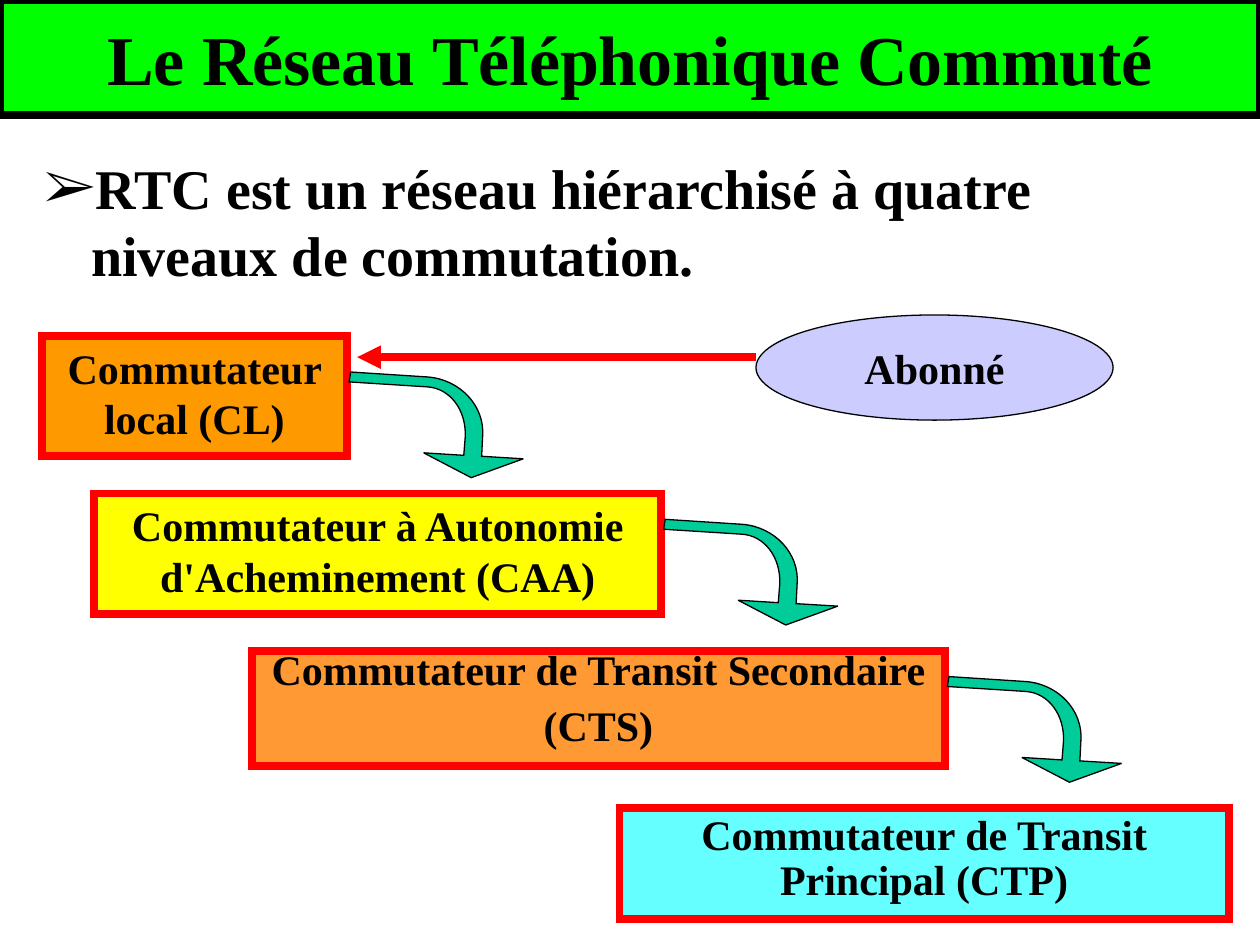
"""Build a slide on the four switching levels of the telephone network."""
from dataclasses import dataclass
from typing import Optional

import lxml.etree
import pptx
import pptx.dml.color
import pptx.enum.shapes
import pptx.enum.text
import pptx.oxml.ns
import pptx.util

Cm = pptx.util.Cm
Pt = pptx.util.Pt
Shape = pptx.enum.shapes.MSO_SHAPE
Align = pptx.enum.text.PP_ALIGN
Anchor = pptx.enum.text.MSO_ANCHOR


@dataclass(frozen=True)
class Theme:
    font: str = "Times New Roman"
    title_size: float = 40
    body_size: float = 32
    label_size: float = 24
    ink: str = "000000"
    title_fill: str = "00FF00"
    border: str = "FF0000"
    bend_fill: str = "00CC99"
    caller_fill: str = "CCCCFF"
    thick: float = 4.5
    thin: float = 0.75


@dataclass(frozen=True)
class Level:
    lines: tuple[str, ...]
    left: float
    top: float
    width: float
    height: float
    fill: str
    spacing: Optional[float] = None
    bend_top: Optional[float] = None


THEME = Theme()
LEVELS = (
    Level(("Commutateur local (CL)",), 0.85, 6.77, 6.14, 2.43, "FF9900", bend_top=7.5),
    Level(("Commutateur à Autonomie d'Acheminement (CAA)",),
          1.9, 9.95, 11.43, 2.43, "FFFF00", bend_top=10.47),
    Level(("Commutateur de Transit Secondaire", "(CTS)"),
          5.08, 13.12, 13.97, 2.33, "FF9933", 0.7, 13.64),
    Level(("Commutateur de Transit Principal (CTP)",),
          12.49, 16.29, 12.28, 2.24, "66FFFF", 0.9),
)
BEND = (
    (2.51, 2.13), (3.56, 1.75), (2.72, 1.7), (2.74, 1.3),
    (2.79, 0.69), (2.29, 0.15), (1.63, 0.1),
    (0.08, 0), (0.05, 0.2), (1.63, 0.3),
    (2.08, 0.33), (2.41, 0.76), (2.39, 1.3),
    (2.36, 1.68), (1.55, 1.63),
)
BEND_CURVES = (4, 10)


def rgb(value: str):
    """Return a colour from its hexadecimal value."""
    return pptx.dml.color.RGBColor.from_string(value)


def add_element(parent, tag: str, **attributes: str):
    """Append a drawing element to a parent."""
    return lxml.etree.SubElement(parent, pptx.oxml.ns.qn(tag), attributes)


def paint(shape, fill: str, line: str, width: float) -> None:
    """Set fill and sharp-cornered outline and drop the shadow."""
    shape.shadow.inherit = False
    shape.fill.solid()
    shape.fill.fore_color.rgb = rgb(fill)
    shape.line.color.rgb = rgb(line)
    shape.line.width = Pt(width)
    add_element(shape.line._get_or_add_ln(), "a:miter", lim="800000")


def write(shape, *lines: str, size: float, align=Align.CENTER, anchor=Anchor.TOP,
          wrap: bool = True, spacing: Optional[float] = None,
          gap: float = 0, bullet: str = "") -> None:
    """Write formatted paragraphs into a shape."""
    frame = shape.text_frame
    frame.word_wrap = wrap
    frame.vertical_anchor = anchor
    for index, text in enumerate(lines):
        para = frame.add_paragraph() if index else frame.paragraphs[0]
        para.alignment = align
        if spacing:
            para.line_spacing = spacing
        if index:
            para.space_before = Pt(gap)
        if bullet:
            properties = para._p.get_or_add_pPr()
            properties.set("marL", str(Cm(0.95)))
            properties.set("indent", str(-Cm(0.95)))
            add_element(properties, "a:buFont", typeface=THEME.font)
            add_element(properties, "a:buChar", char=bullet)
        span = para.add_run()
        span.text = text
        span.font.name = THEME.font
        span.font.size = Pt(size)
        span.font.bold = True
        span.font.color.rgb = rgb(THEME.ink)


def add_panel(page, kind, left: float, top: float, width: float, height: float,
              fill: str, line: str, thickness: float):
    """Add a painted preset shape."""
    panel = page.shapes.add_shape(kind, Cm(left), Cm(top), Cm(width), Cm(height))
    paint(panel, fill, line, thickness)
    return panel


def add_bend(page, left: float, top: float) -> None:
    """Add a bent arrow with true curves leading to the next level."""
    points = [(Cm(left + x), Cm(top + y)) for x, y in BEND]
    builder = page.shapes.build_freeform(*points[0])
    builder.add_line_segments(points[1:], close=True)
    bend = builder.convert_to_shape()
    outline = next(bend._element.iter(pptx.oxml.ns.qn("a:path")))
    segments = list(outline)
    for first in BEND_CURVES:
        curve = add_element(outline, "a:cubicBezTo")
        segments[first].addprevious(curve)
        for segment in segments[first:first + 3]:
            curve.append(segment[0])
            outline.remove(segment)
    paint(bend, THEME.bend_fill, THEME.ink, THEME.thin)


def add_level(page, level: Level) -> None:
    """Add the box of a switching level."""
    box = add_panel(page, Shape.RECTANGLE, level.left, level.top, level.width,
                    level.height, level.fill, THEME.border, THEME.thick)
    write(box, *level.lines, size=THEME.label_size, spacing=level.spacing, gap=12)


def add_call(page, start: float, end: float, height: float) -> None:
    """Add the horizontal arrow from the caller."""
    call = page.shapes.add_connector(pptx.enum.shapes.MSO_CONNECTOR.STRAIGHT,
                                     Cm(start), Cm(height), Cm(end), Cm(height))
    call.line.color.rgb = rgb(THEME.border)
    call.line.width = Pt(THEME.thick)
    add_element(call.line._get_or_add_ln(), "a:tailEnd", type="triangle")
    add_element(call._element.spPr, "a:effectLst")


def main() -> None:
    """Build and save the deck."""
    deck = pptx.Presentation()
    deck.slide_width, deck.slide_height = Cm(25.4), Cm(19.05)
    page = deck.slides.add_slide(deck.slide_layouts[6])

    title = add_panel(page, Shape.RECTANGLE, 0, 0, 25.4, 2.32,
                      THEME.title_fill, THEME.ink, THEME.thick)
    write(title, "Le Réseau Téléphonique Commuté", size=THEME.title_size,
          anchor=Anchor.MIDDLE)
    body = page.shapes.add_textbox(Cm(0.64), Cm(2.97), Cm(24.13), Cm(3.39))
    write(body, "RTC est un réseau hiérarchisé à quatre niveaux de commutation.",
          size=THEME.body_size, align=Align.LEFT, bullet="➢")

    for level in LEVELS:
        add_level(page, level)
    for level in LEVELS:
        if level.bend_top is not None:
            add_bend(page, level.left + level.width, level.bend_top)

    caller = add_panel(page, Shape.OVAL, 15.24, 6.35, 7.2, 2.12,
                       THEME.caller_fill, THEME.ink, THEME.thin)
    write(caller, "Abonné", size=THEME.label_size, anchor=Anchor.MIDDLE, wrap=False)
    add_call(page, 15.24, 7.2, 7.2)
    deck.save("out.pptx")


if __name__ == "__main__":
    main()
